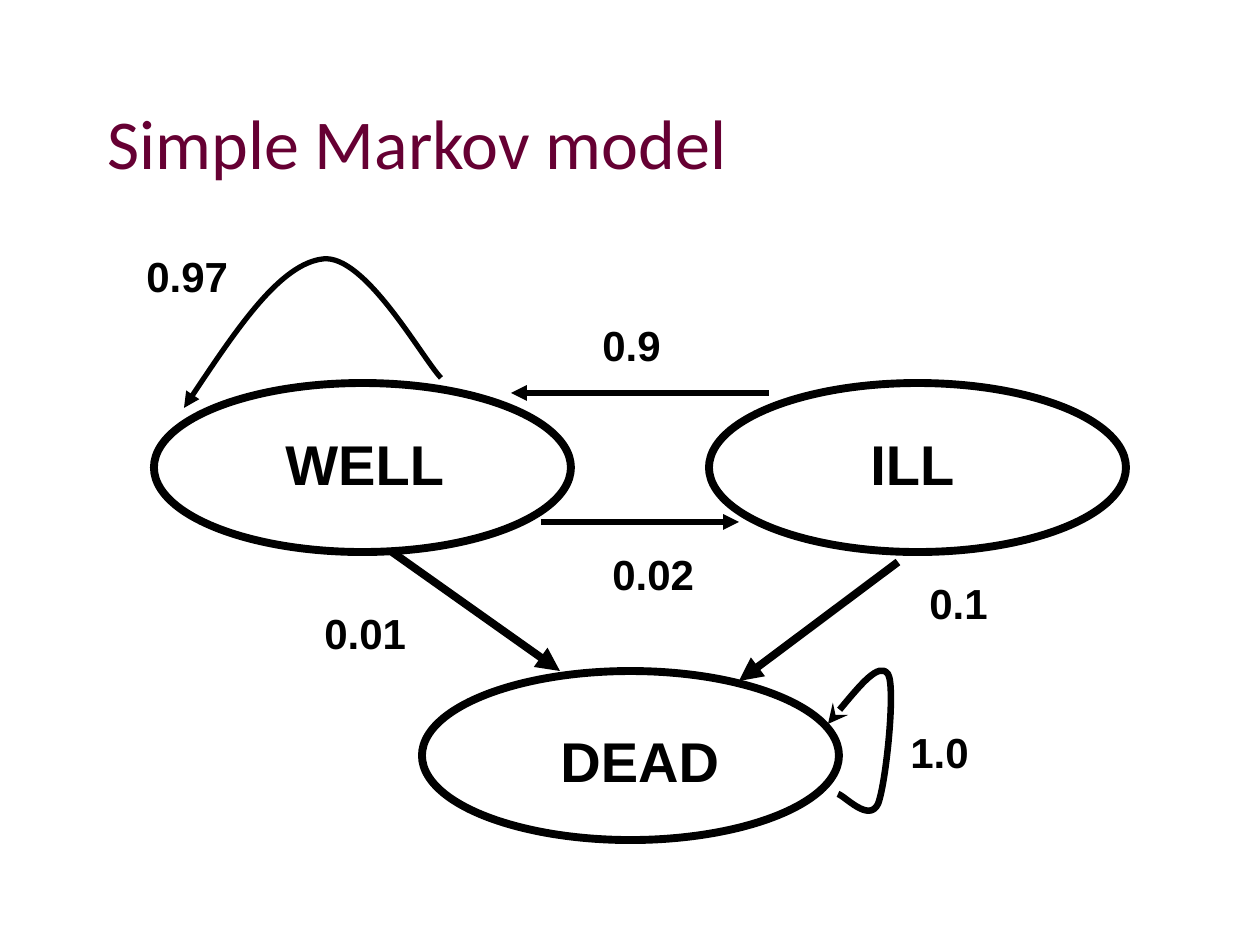
"""Draw a three-state Markov model with its transition probabilities."""
from dataclasses import dataclass

from lxml import etree
from pptx import Presentation
from pptx import util as u
from pptx.dml.color import RGBColor
from pptx.enum import shapes, text
from pptx.oxml.ns import qn

SCALE = 914400 / 126


def px(n):
    """Turn px into EMU."""
    return u.Emu(round(n * SCALE))


@dataclass(frozen=True)
class Theme:
    """Hold the colours, fonts and sizes."""
    ink: str = "000000"
    plum: str = "660033"
    head: str = "Calibri"
    body: str = "Arial"
    title: int = 40
    state: int = 32
    prob: int = 24
    thin: float = 3
    mid: float = 3.75
    thick: float = 4.5


def write(frame, words, *, size, font, color, bold=False, wrap=True,
          anchor=text.MSO_ANCHOR.TOP):
    """Put one left-aligned paragraph into a text frame."""
    frame.word_wrap = wrap
    frame.vertical_anchor = anchor
    para = frame.paragraphs[0]
    para.alignment = text.PP_ALIGN.LEFT
    run = para.add_run()
    run.text = words
    run.font.size = u.Pt(size)
    run.font.name = font
    run.font.bold = bold
    run.font.color.rgb = RGBColor.from_string(color)


class Board:
    """Hold the style and the current slide."""

    def __init__(self, deck, theme):
        """Add a title-only slide."""
        self.theme = theme
        self.slide = deck.slides.add_slide(deck.slide_layouts[5])
        self.shapes = self.slide.shapes

    def title(self, words, x, y, w, h):
        """Place and fill the title."""
        box = self.shapes.title
        box.left, box.top, box.width, box.height = map(px, (x, y, w, h))
        write(box.text_frame, words, size=self.theme.title,
              font=self.theme.head, color=self.theme.plum,
              anchor=text.MSO_ANCHOR.MIDDLE)

    def label(self, words, x, y, w, h, size):
        """Add a bold label."""
        box = self.shapes.add_textbox(*map(px, (x, y, w, h)))
        write(box.text_frame, words, size=size, font=self.theme.body,
              color=self.theme.ink, bold=True, wrap=False)
        box.text_frame.auto_size = text.MSO_AUTO_SIZE.SHAPE_TO_FIT_TEXT

    def stroke(self, item, width, **ends):
        """Set the line of an item and its arrowheads."""
        item.line.color.rgb = RGBColor.from_string(self.theme.ink)
        item.line.width = u.Pt(width)
        for end, kind in ends.items():
            etree.SubElement(item.line._get_or_add_ln(),
                             qn(f"a:{end}End"), type=kind)

    def oval(self, x, y, w=417, h=169):
        """Add the outline of a state."""
        item = self.shapes.add_shape(shapes.MSO_SHAPE.OVAL,
                                     *map(px, (x, y, w, h)))
        item.shadow.inherit = False
        item.fill.background()
        self.stroke(item, self.theme.thick)

    def arrow(self, start, end, width):
        """Add a straight arrow."""
        item = self.shapes.add_connector(shapes.MSO_CONNECTOR.STRAIGHT,
                                         *map(px, start + end))
        self.stroke(item, width, tail="triangle")
        etree.SubElement(item._element.spPr, qn("a:effectLst"))

    def loop(self, points, width, kind):
        """Add a Bezier curve with an arrowhead at its start."""
        pen = self.shapes.build_freeform(*points[0], scale=SCALE)
        pen.add_line_segments(points[1:], close=False)
        item = pen.convert_to_shape()
        legs = list(item._element.iter(qn("a:lnTo")))
        for i in range(0, len(legs), 3):
            curve = etree.Element(qn("a:cubicBezTo"))
            legs[i].addprevious(curve)
            for leg in legs[i:i + 3]:
                curve.append(leg[0])
                leg.getparent().remove(leg)
        item.shadow.inherit = False
        item.fill.background()
        self.stroke(item, width, head=kind)


def main():
    """Build and save the slide."""
    deck = Presentation()
    deck.slide_width, deck.slide_height = px(1260), px(945)
    theme = Theme()
    board = Board(deck, theme)
    board.title("Simple Markov model", 95, 62, 1071, 158)

    for x, y in ((422, 671), (709, 383), (154, 383)):
        board.oval(x, y)
    for name, x, y, w in (("DEAD", 548, 720, 184), ("WELL", 273, 423, 184),
                          ("ILL", 858, 423, 110)):
        board.label(name, x, y, w, 79, theme.state)

    for start, end, width in (
            ((392, 552), (560, 671), theme.thick),
            ((898, 562), (739, 681), theme.thick),
            ((769, 393), (511, 393), theme.thin),
            ((541, 522), (739, 522), theme.thin)):
        board.arrow(start, end, width)

    board.loop([(828, 724), (854, 692), (879, 662), (888, 674), (896, 687),
                (886, 784), (878, 804), (869, 823), (845, 796), (838, 794)],
               theme.mid, "stealth")
    board.loop([(184, 408), (232, 336), (280, 264), (323, 259), (365, 254),
                (422, 358), (441, 378)], theme.thin, "triangle")

    for prob, x, y, w in (
            ("1.0", 898, 720, 85), ("0.02", 600, 542, 108),
            ("0.01", 312, 601, 108), ("0.97", 134, 244, 108),
            ("0.9", 590, 313, 85), ("0.1", 917, 571, 85)):
        board.label(prob, x, y, w, 63, theme.prob)
    deck.save("out.pptx")


if __name__ == "__main__":
    main()
